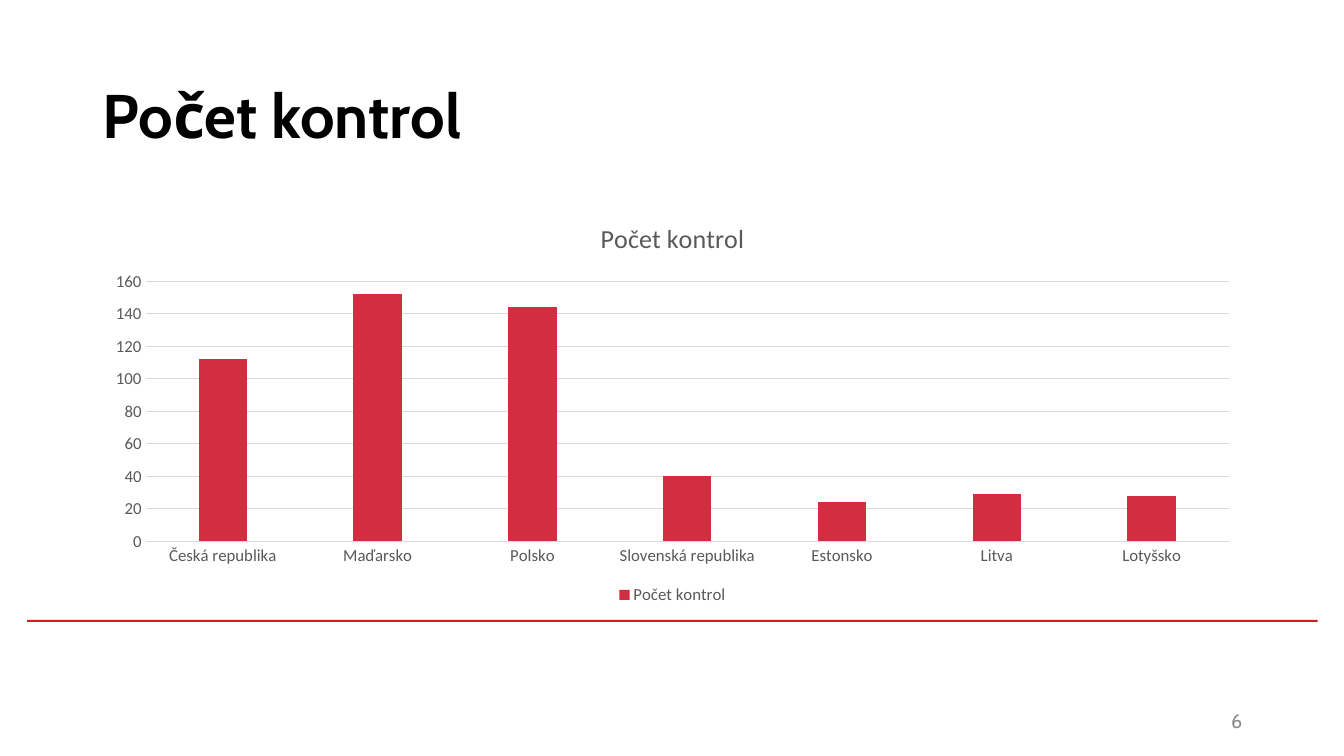
from dataclasses import dataclass

from pptx import Presentation
from pptx.chart.data import CategoryChartData
from pptx.dml.color import RGBColor
from pptx.enum.chart import XL_CHART_TYPE, XL_LEGEND_POSITION, XL_TICK_MARK
from pptx.enum.shapes import MSO_SHAPE
from pptx.enum.text import MSO_ANCHOR, PP_ALIGN
from pptx.util import Inches, Pt

COLUMNS = XL_CHART_TYPE.COLUMN_CLUSTERED
BOTTOM = XL_LEGEND_POSITION.BOTTOM
NO_TICK = XL_TICK_MARK.NONE
RECTANGLE = MSO_SHAPE.RECTANGLE
MIDDLE = MSO_ANCHOR.MIDDLE
LEFT, RIGHT = PP_ALIGN.LEFT, PP_ALIGN.RIGHT


@dataclass(frozen=True)
class Theme:
    heading_font: str = "Cabin"
    chart_font: str = "Calibri"
    black: str = "000000"
    grey: str = "595959"
    pale_grey: str = "8C8C8C"
    grid: str = "D9D9D9"
    rule: str = "CD1F21"
    bar: str = "D22D40"
    title_size: float = 44
    chart_title_size: float = 18.6
    label_size: float = 12
    number_size: float = 14


class SlideBuilder:
    def __init__(self, slide, theme):
        self.s = slide
        self.theme = theme

    def style_font(self, font, name, size, color, bold=False):
        for key, value in {"name": name, "size": Pt(size), "bold": bold}.items():
            setattr(font, key, value)
        font.color.rgb = RGBColor.from_string(color)

    def style_line(self, line):
        line.color.rgb = RGBColor.from_string(self.theme.grid)
        line.width = Pt(0.75)

    def bar(self, box, color):
        sp = self.s.shapes.add_shape(RECTANGLE, *map(Inches, box))
        sp.shadow.inherit = False
        sp.fill.solid()
        sp.fill.fore_color.rgb = RGBColor.from_string(color)
        sp.line.fill.background()

    def text(self, box, text, size, color, bold=False, align=LEFT):
        tf = self.s.shapes.add_textbox(*map(Inches, box)).text_frame
        for key, value in {"word_wrap": True, "vertical_anchor": MIDDLE}.items():
            setattr(tf, key, value)
        p = tf.paragraphs[0]
        p.alignment = align
        r = p.add_run()
        r.text = text
        self.style_font(r.font, self.theme.heading_font, size, color, bold)

    def column_chart(self, box, name, values):
        t = self.theme
        data = CategoryChartData()
        data.categories = list(values)
        data.add_series(name, list(values.values()))
        chart = self.s.shapes.add_chart(COLUMNS, *map(Inches, box), data).chart
        self.style_font(chart.font, t.chart_font, t.label_size, t.grey)

        # Chart title and legend
        chart.has_title = True
        p = chart.chart_title.text_frame.paragraphs[0]
        r = p.add_run()
        r.text = name
        self.style_font(r.font, t.chart_font, t.chart_title_size, t.grey)
        chart.chart_title.include_in_layout = False
        chart.has_legend = True
        for key, value in {"position": BOTTOM, "include_in_layout": False}.items():
            setattr(chart.legend, key, value)

        # Axes
        for axis in (chart.category_axis, chart.value_axis):
            axis.major_tick_mark = axis.minor_tick_mark = NO_TICK
        self.style_line(chart.category_axis.format.line)
        value_axis = chart.value_axis
        scale = {"minimum_scale": 0, "maximum_scale": 160, "major_unit": 20}
        for key, value in scale.items():
            setattr(value_axis, key, value)
        value_axis.format.line.fill.background()
        self.style_line(value_axis.major_gridlines.format.line)

        # Columns
        plot = chart.plots[0]
        spacing = {"gap_width": 219, "overlap": -27, "vary_by_categories": False}
        for key, value in spacing.items():
            setattr(plot, key, value)
        fill = plot.series[0].format.fill
        fill.solid()
        fill.fore_color.rgb = RGBColor.from_string(t.bar)


INSPECTIONS = {
    "Česká republika": 112,
    "Maďarsko": 152,
    "Polsko": 144,
    "Slovenská republika": 40,
    "Estonsko": 24,
    "Litva": 29,
    "Lotyšsko": 28,
}


def main():
    prs = Presentation()
    prs.slide_width, prs.slide_height = Inches(13.33), Inches(7.5)
    theme = Theme()
    slide = SlideBuilder(prs.slides.add_slide(prs.slide_layouts[6]), theme)
    heading = "Počet kontrol"

    # Footer rule
    slide.bar((0.27, 6.15, 12.8, 0.02), theme.rule)
    # Heading
    slide.text((0.92, 0.4, 11.5, 1.45), heading, theme.title_size, theme.black, bold=True)
    # Inspections by country
    slide.column_chart((0.92, 2, 11.5, 4.04), heading, INSPECTIONS)
    # Page number
    slide.text((9.42, 6.95, 3, 0.4), "6", theme.number_size, theme.pale_grey, align=RIGHT)

    prs.save("out.pptx")


if __name__ == "__main__":
    main()
